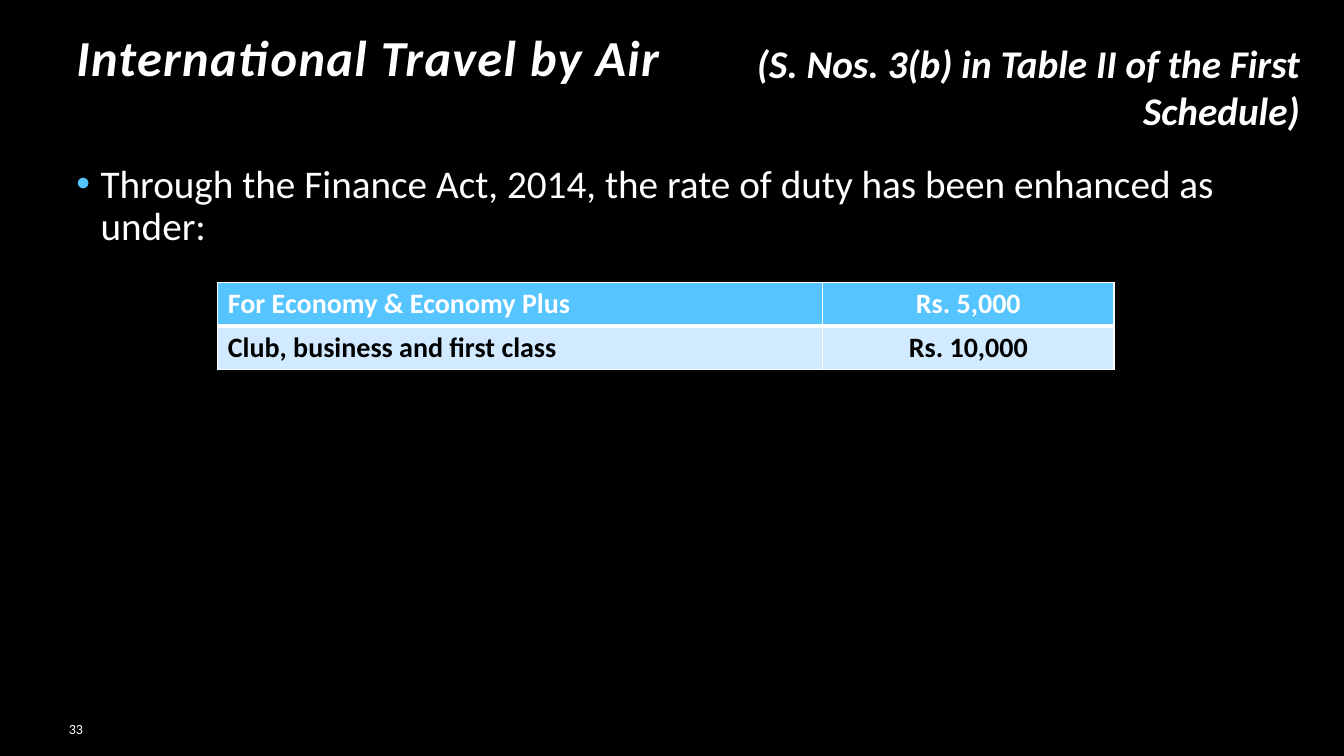
from lxml import etree
from pptx import Presentation
from pptx.dml.color import RGBColor
from pptx.enum import text as t
from pptx.oxml import ns
from pptx.util import Inches, Pt

BLACK = RGBColor(0x00, 0x00, 0x00)
WHITE = RGBColor(0xFF, 0xFF, 0xFF)
SKY = RGBColor(0x56, 0xC5, 0xFF)
PALE_SKY = RGBColor(0xD1, 0xEA, 0xFF)
LEFT, CENTER, RIGHT = t.PP_ALIGN.LEFT, t.PP_ALIGN.CENTER, t.PP_ALIGN.RIGHT
TOP, MIDDLE, BOTTOM = t.MSO_ANCHOR.TOP, t.MSO_ANCHOR.MIDDLE, t.MSO_ANCHOR.BOTTOM


def add_run(paragraph, words, size, color=WHITE, bold=False, italic=False):
    run = paragraph.add_run()
    run.text = words
    run.font.name = "Calibri"
    run.font.size = Pt(size)
    run.font.color.rgb = color
    run.font.bold = bold
    run.font.italic = italic
    return run


def add_box(left, top, width, height, anchor=TOP, align=LEFT):
    box = slide.shapes.add_textbox(Inches(left), Inches(top), Inches(width), Inches(height))
    box.text_frame.word_wrap = True
    box.text_frame.vertical_anchor = anchor
    paragraph = box.text_frame.paragraphs[0]
    paragraph.alignment = align
    return paragraph


deck = Presentation()
deck.slide_width = Inches(13.33)
deck.slide_height = Inches(7.5)
slide = deck.slides.add_slide(deck.slide_layouts[6])
slide.background.fill.solid()
slide.background.fill.fore_color.rgb = BLACK

title = add_box(0.66, -0.58, 10, 1.5, anchor=BOTTOM)
title.line_spacing = 0.9
title_run = add_run(title, "International Travel by Air", 36, bold=True, italic=True)
title_run.font._element.set("spc", "100")

page_number = add_box(0, 7.08, 0.92, 0.3, anchor=MIDDLE, align=RIGHT)
add_run(page_number, "33", 10)

duty_change = add_box(0.66, 1.58, 12, 5.33)
duty_change.line_spacing = 0.9
bullet_props = duty_change._p.get_or_add_pPr()
bullet_props.set("marL", str(Inches(0.24)))
bullet_props.set("indent", str(-Inches(0.24)))
bullet_color = etree.SubElement(bullet_props, ns.qn("a:buClr"))
etree.SubElement(bullet_color, ns.qn("a:srgbClr"), val=str(SKY))
etree.SubElement(bullet_props, ns.qn("a:buFont"), typeface="Arial")
etree.SubElement(bullet_props, ns.qn("a:buChar"), char="•")
add_run(duty_change, "Through the Finance Act, 2014, the rate of duty has been enhanced as under:", 28)

schedule_ref = add_box(6.33, 0.34, 6.66, 1.04, align=RIGHT)
add_run(schedule_ref, "(S. Nos. 3(b) in Table II of the First Schedule)", 28, bold=True, italic=True)

rates = [
    ("For Economy & Economy Plus", "Rs. 5,000", SKY, WHITE, {"lnB": 3}),
    ("Club, business and first class", "Rs. 10,000", PALE_SKY, BLACK, {"lnT": 3}),
]
duty_table = slide.shapes.add_table(2, 2, Inches(2.16), Inches(2.8), Inches(8.89), Inches(0.87)).table
for column, width in zip(duty_table.columns, (6, 2.89)):
    column.width = Inches(width)

for row, (travel_class, rate, fill, ink, thick_edge) in enumerate(rates):
    for col, (words, align) in enumerate([(travel_class, LEFT), (rate, CENTER)]):
        cell = duty_table.cell(row, col)
        cell_props = cell._tc.get_or_add_tcPr()
        for edge in ("lnL", "lnR", "lnT", "lnB"):
            line = etree.SubElement(cell_props, ns.qn(f"a:{edge}"), w=str(Pt(thick_edge.get(edge, 1))))
            line_fill = etree.SubElement(line, ns.qn("a:solidFill"))
            etree.SubElement(line_fill, ns.qn("a:srgbClr"), val=str(WHITE))
        cell.fill.solid()
        cell.fill.fore_color.rgb = fill
        entry = cell.text_frame.paragraphs[0]
        entry.alignment = align
        add_run(entry, words, 20, ink, bold=True)

deck.save("out.pptx")
